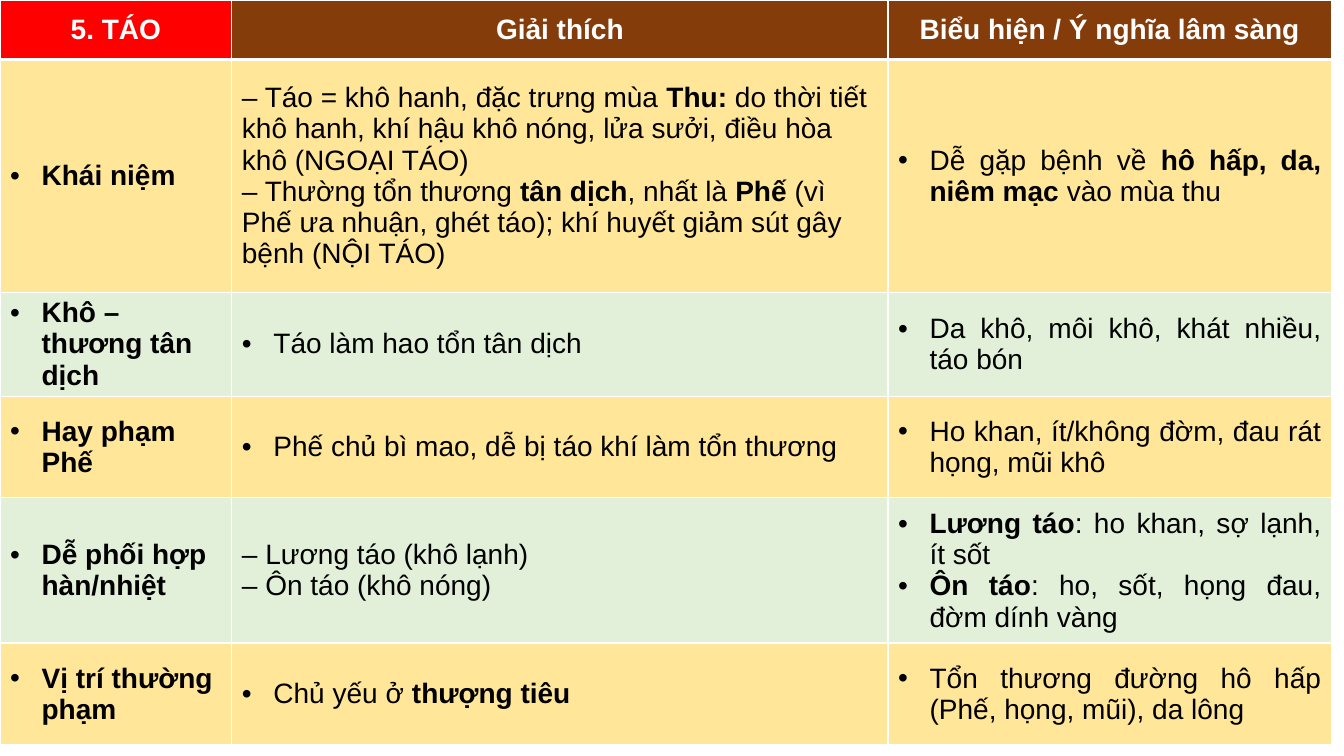
"""Build a one-slide table on the dryness factor (Táo) in traditional medicine."""
from lxml import etree
from pptx import Presentation
from pptx.dml.color import RGBColor
from pptx.enum.text import MSO_ANCHOR, PP_ALIGN
from pptx.oxml.ns import qn
from pptx.util import Pt

MIDDLE = MSO_ANCHOR.MIDDLE
LEFT, CENTER, JUSTIFY = PP_ALIGN.LEFT, PP_ALIGN.CENTER, PP_ALIGN.JUSTIFY

HEADINGS = ["5. TÁO", "Giải thích", "Biểu hiện / Ý nghĩa lâm sàng"]
BOLD_MARK = "**"
ROWS = [
    (["**Khái niệm**"],
     ["– Táo = khô hanh, đặc trưng mùa **Thu: **do thời tiết khô hanh, khí hậu khô nóng, "
      "lửa sưởi, điều hòa khô (NGOẠI TÁO)",
      "– Thường tổn thương **tân dịch**, nhất là **Phế** (vì Phế ưa nhuận, ghét táo); "
      "khí huyết giảm sút gây bệnh (NỘI TÁO)"],
     ["Dễ gặp bệnh về **hô hấp, da, niêm mạc **vào mùa thu"]),
    (["**Khô – thương tân dịch**"],
     ["Táo làm hao tổn tân dịch"],
     ["Da khô, môi khô, khát nhiều, táo bón"]),
    (["**Hay phạm Phế**"],
     ["Phế chủ bì mao, dễ bị táo khí làm tổn thương"],
     ["Ho khan, ít/không đờm, đau rát họng, mũi khô"]),
    (["**Dễ phối hợp hàn/nhiệt**"],
     ["– Lương táo (khô lạnh)", "– Ôn táo (khô nóng)"],
     ["**Lương táo**: ho khan, sợ lạnh, ít sốt", "**Ôn táo**: ho, sốt, họng đau, đờm dính vàng"]),
    (["**Vị trí thường phạm**"],
     ["Chủ yếu ở **thượng tiêu**"],
     ["Tổn thương đường hô hấp (Phế, họng, mũi), da lông"]),
]
COLUMN_WIDTHS = [165.6, 468.7, 316.8]
ROW_HEIGHTS = [42.5, 166.3, 72.7, 72.7, 103.7, 72.7]
HEADING_FILLS = ["FF0000", "843C0B", "843C0B"]
BAND_FILLS = ["FFE699", "E2F0D9"]
COLUMN_ALIGNMENTS = [LEFT, LEFT, JUSTIFY]
BULLET_INDENT = Pt(22.5)
WHITE, BLACK = "FFFFFF", "000000"


def color(value):
    return RGBColor.from_string(value)


def add_borders(cell, top, bottom):
    properties = cell._tc.get_or_add_tcPr()
    for side, width in {"L": 1, "R": 1, "T": top, "B": bottom}.items():
        line = etree.SubElement(properties, qn(f"a:ln{side}"), w=str(Pt(width)))
        fill = etree.SubElement(line, qn("a:solidFill"))
        etree.SubElement(fill, qn("a:srgbClr"), val=WHITE)


def add_bullet(paragraph):
    properties = paragraph._p.get_or_add_pPr()
    properties.set("marL", str(BULLET_INDENT))
    properties.set("indent", str(-BULLET_INDENT))
    etree.SubElement(properties, qn("a:buFont"), typeface="Arial")
    etree.SubElement(properties, qn("a:buChar"), char="•")


def write_paragraph(paragraph, text, alignment, text_color):
    paragraph.alignment = alignment
    for index, part in enumerate(text.split(BOLD_MARK)):
        if part:
            run = paragraph.add_run()
            run.text = part
            font_format = {"name": "Arial", "size": Pt(20), "bold": index % 2 == 1}
            for attribute, value in font_format.items():
                setattr(run.font, attribute, value)
            run.font.color.rgb = color(text_color)


def fill_cell(cell, lines, fill, alignment, text_color, top=1, bottom=1):
    add_borders(cell, top, bottom)
    cell.fill.solid()
    cell.fill.fore_color.rgb = color(fill)
    cell.vertical_anchor = MIDDLE
    frame = cell.text_frame
    for index, text in enumerate(lines):
        paragraph = frame.add_paragraph() if index else frame.paragraphs[0]
        write_paragraph(paragraph, text, alignment, text_color)
        if alignment != CENTER and not text.startswith("–"):
            add_bullet(paragraph)


def main():
    presentation = Presentation()
    presentation.slide_width, presentation.slide_height = Pt(960), Pt(540)
    slide = presentation.slides.add_slide(presentation.slide_layouts[6])
    table = slide.shapes.add_table(
        len(ROW_HEIGHTS), len(COLUMN_WIDTHS), Pt(0), Pt(0),
        Pt(sum(COLUMN_WIDTHS)), Pt(sum(ROW_HEIGHTS))).table
    for column, width in zip(table.columns, COLUMN_WIDTHS):
        column.width = Pt(width)
    for row, height in zip(table.rows, ROW_HEIGHTS):
        row.height = Pt(height)

    for column, (heading, fill) in enumerate(zip(HEADINGS, HEADING_FILLS)):
        bold_heading = BOLD_MARK + heading + BOLD_MARK
        fill_cell(table.cell(0, column), [bold_heading], fill, CENTER, WHITE, bottom=3)
    for row, contents in enumerate(ROWS, start=1):
        fill = BAND_FILLS[(row - 1) % 2]
        for column, lines in enumerate(contents):
            fill_cell(table.cell(row, column), lines, fill, COLUMN_ALIGNMENTS[column],
                      BLACK, top=3 if row == 1 else 1)
    presentation.save("out.pptx")


if __name__ == "__main__":
    main()
